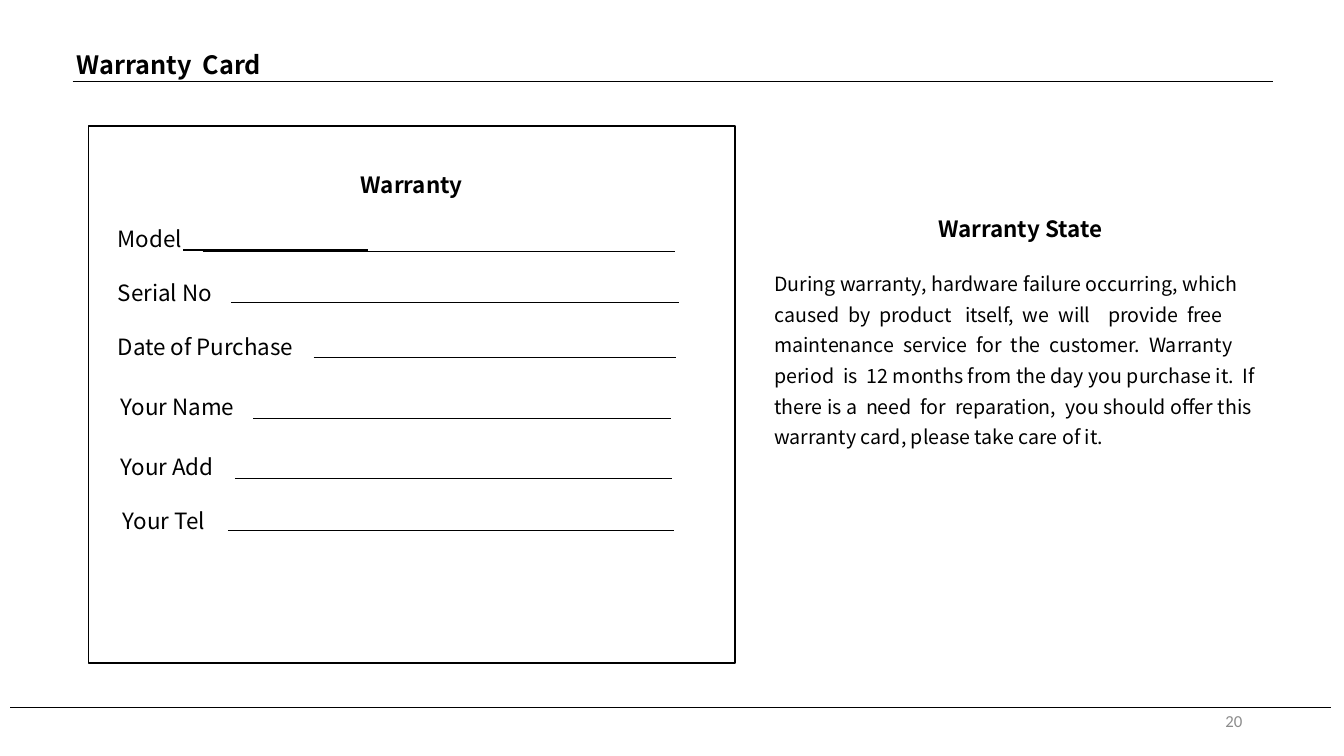
import pptx
import pptx.util
import pptx.dml.color
import pptx.enum.shapes
import pptx.enum.text
import lxml.etree
from dataclasses import dataclass

PX = 9144  # 100 px to the inch
Pt = pptx.util.Pt
Align = pptx.enum.text.PP_ALIGN
Anchor = pptx.enum.text.MSO_ANCHOR


@dataclass(frozen=True)
class Theme:
    ink: str = "000000"
    paper: str = "FFFFFF"
    pale: str = "8C8C8C"
    font: str = "Noto Sans CJK SC"
    plain: str = "Calibri"
    title: int = 18
    head: int = 16
    body: int = 14
    small: int = 12
    thin: float = 0.5
    edge: float = 1
    lead: float = 1.2


THEME = Theme()

# label, indent, space before in points, rule start, rule end, rule height
ROWS = [
    ("Model", 19, 19.3, 201, 669, 249),
    ("Serial No", 19, 19.3, 229, 673, 300),
    ("Date of Purchase", 19, 19.3, 311, 670, 355),
    ("Your Name", 22, 23.6, 251, 666, 415),
    ("Your Add", 22, 23.6, 233, 667, 475),
    ("Your Tel", 24, 19.3, 226, 668, 526),
]

STATE = (
    "During warranty, hardware failure occurring, which caused  by  product   "
    "itself,  we  will    provide  free maintenance  service  for  the  customer.  "
    "Warranty period  is  12 months from the day you purchase it.  If there is a  "
    "need  for  reparation,  you should offer this warranty card, please take "
    "care of it."
)


def rgb(code):
    return pptx.dml.color.RGBColor.from_string(code)


def place(shape, box):
    shape.left, shape.top, shape.width, shape.height = (n * PX for n in box)


def style(para, size, bold=False, color=THEME.ink, font=THEME.font,
          align=Align.LEFT, before=0, lead=None, indent=0):
    para.alignment = align
    para.space_before = Pt(before)
    para.line_spacing = Pt(lead or size * THEME.lead)
    props = para._p.get_or_add_pPr()
    props.set("marL", str(indent * PX))
    props.set("indent", "0")
    lxml.etree.SubElement(props, pptx.oxml.ns.qn("a:buNone"))
    for run in para.runs:
        run.font.size = Pt(size)
        run.font.bold = bold
        run.font.name = font
        run.font.color.rgb = rgb(color)


def setup(frame, anchor=Anchor.TOP):
    frame.word_wrap = True
    frame.auto_size = pptx.enum.text.MSO_AUTO_SIZE.NONE
    frame.vertical_anchor = anchor


def rule(slide, left, right, y, width=THEME.thin):
    line = slide.shapes.add_connector(
        pptx.enum.shapes.MSO_CONNECTOR.STRAIGHT,
        left * PX, y * PX, right * PX, y * PX)
    line.line.color.rgb = rgb(THEME.ink)
    line.line.width = Pt(width)
    lxml.etree.SubElement(line._element.spPr, pptx.oxml.ns.qn("a:effectLst"))


def header(slide, box):
    title = slide.shapes.title
    place(title, box)
    setup(title.text_frame)
    title.text_frame.text = "Warranty  Card"
    style(title.text_frame.paragraphs[0], THEME.title, bold=True)
    left, top = box[:2]
    rule(slide, left + 6, left + 1197, top + 37)


def card(slide, box):
    """Framed form: a heading, then labels with rules to write on."""
    left, top, width, height = box
    frame = slide.shapes.add_shape(
        pptx.enum.shapes.MSO_SHAPE.RECTANGLE, *(n * PX for n in box))
    frame.shadow.inherit = False
    frame.fill.solid()
    frame.fill.fore_color.rgb = rgb(THEME.paper)
    frame.line.color.rgb = rgb(THEME.ink)
    frame.line.width = Pt(THEME.edge)
    text = frame.text_frame
    setup(text)
    text.margin_top = 45 * PX
    text.text = "Warranty"
    style(text.paragraphs[0], THEME.head, bold=True, align=Align.CENTER)
    for label, indent, before, start, end, y in ROWS:
        para = text.add_paragraph()
        para.text = label
        style(para, THEME.head, before=before, indent=indent)
        rule(slide, left + start - 88, left + end - 88, top + y - 125)
    rule(slide, left + 94, left + 277, top + 123, THEME.edge)


def state(slide, box):
    body = slide.placeholders[1]
    place(body, box)
    text = body.text_frame
    setup(text)
    text.text = "Warranty State"
    style(text.paragraphs[0], THEME.head, bold=True, align=Align.CENTER)
    para = text.add_paragraph()
    para.text = STATE
    style(para, THEME.body, before=17, lead=21.8)


def footer(slide, box):
    left, top, width, height = box
    rule(slide, left, left + width, top)
    number = slide.shapes.add_textbox(
        (left + 932) * PX, (top - 7) * PX, 300 * PX, height * PX)
    setup(number.text_frame, Anchor.MIDDLE)
    number.text_frame.text = "20"
    style(number.text_frame.paragraphs[0], THEME.small, color=THEME.pale,
          font=THEME.plain, align=Align.RIGHT)


def main():
    deck = pptx.Presentation()
    deck.slide_width, deck.slide_height = 1333 * PX, 750 * PX
    slide = deck.slides.add_slide(deck.slide_layouts[1])
    header(slide, (66, 44, 230, 40))
    card(slide, (88, 125, 641, 533))
    state(slide, (758, 208, 508, 244))
    footer(slide, (10, 702, 1310, 40))
    deck.save("out.pptx")


if __name__ == "__main__":
    main()
